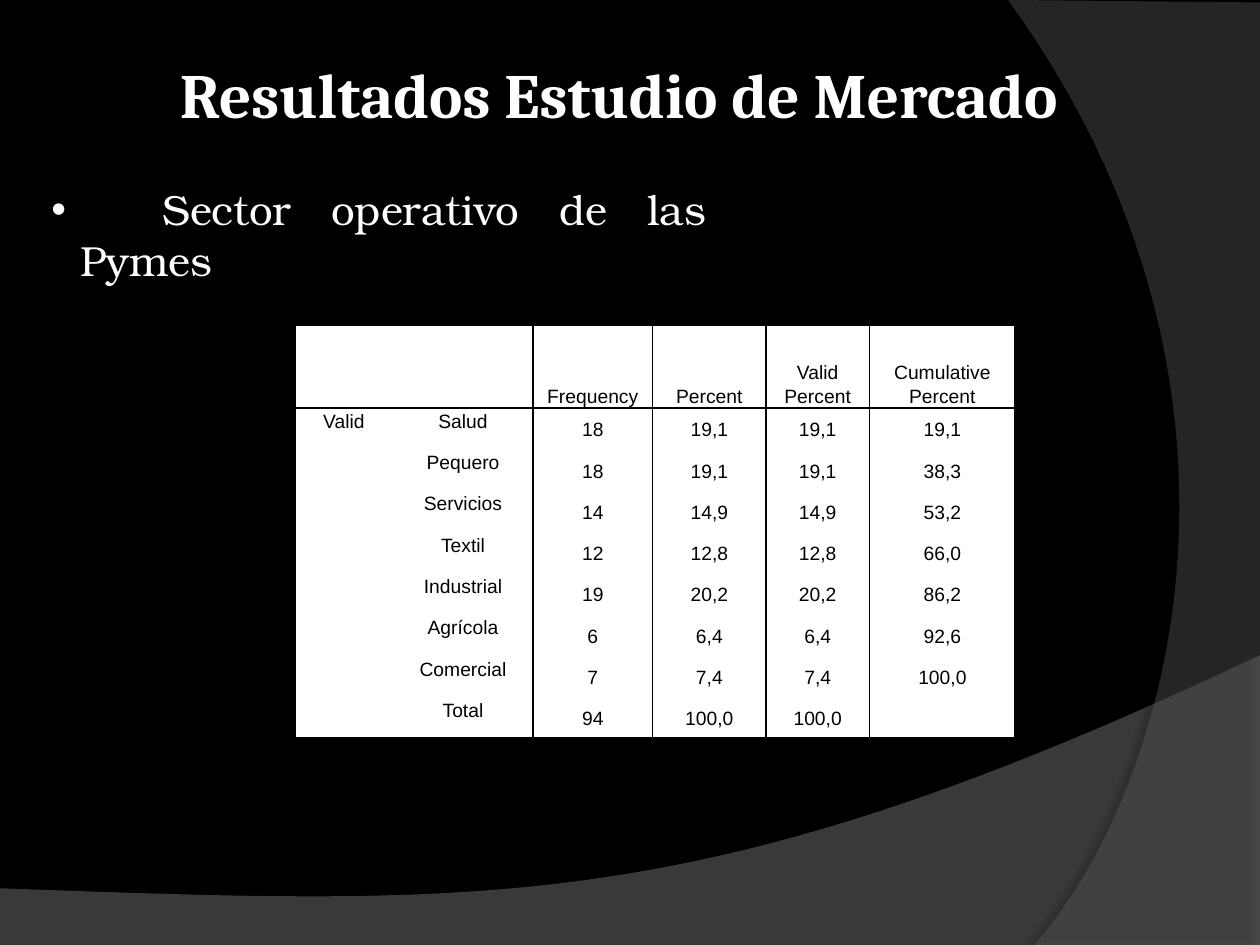
from lxml import etree
from pptx import Presentation
from pptx.dml.color import RGBColor
from pptx.enum.text import MSO_ANCHOR, PP_ALIGN
from pptx.oxml.ns import qn
from pptx.util import Inches, Pt

TOP, MIDDLE, BOTTOM = MSO_ANCHOR.TOP, MSO_ANCHOR.MIDDLE, MSO_ANCHOR.BOTTOM
LEFT, CENTER, JUSTIFY = PP_ALIGN.LEFT, PP_ALIGN.CENTER, PP_ALIGN.JUSTIFY
BLACK, WHITE = "000000", "FFFFFF"

HEAD = ["", "", "Frequency", "Percent", "Valid Percent", "Cumulative Percent"]
ROWS = [
    ["Valid", "Salud", "18", "19,1", "19,1", "19,1"],
    ["", "Pequero", "18", "19,1", "19,1", "38,3"],
    ["", "Servicios", "14", "14,9", "14,9", "53,2"],
    ["", "Textil", "12", "12,8", "12,8", "66,0"],
    ["", "Industrial", "19", "20,2", "20,2", "86,2"],
    ["", "Agrícola", "6", "6,4", "6,4", "92,6"],
    ["", "Comercial", "7", "7,4", "7,4", "100,0"],
    ["", "Total", "94", "100,0", "100,0", ""],
]


def color(code):
    return RGBColor.from_string(code)


def unit(count):
    return Inches(count / 10)


def node(base, tag, **attrs):
    return etree.SubElement(base, qn(tag), {k: str(v) for k, v in attrs.items()})


def curve(start, pull, push, end, steps=48):
    points = []
    for step in range(1, steps + 1):
        t = step / steps
        parts = ((1 - t) ** 3, 3 * t * (1 - t) ** 2, 3 * t * t * (1 - t), t ** 3)
        points.append(tuple(
            sum(w * p[axis] for w, p in zip(parts, (start, pull, push, end)))
            for axis in (0, 1)))
    return points


class Deck:
    def __init__(self):
        self.show = Presentation()
        self.show.slide_width = unit(100)
        self.show.slide_height = unit(75)
        self.slide = self.show.slides.add_slide(self.show.slide_layouts[6])
        fill = self.slide.background.fill
        fill.solid()
        fill.fore_color.rgb = color(BLACK)

    def style(self, para, size, font, ink, bold=False, align=LEFT):
        para.alignment = align
        for run in para.runs:
            run.font.size = Pt(size)
            run.font.name = font
            run.font.bold = bold
            run.font.color.rgb = color(ink)

    def wave(self, points, tint, alpha, shade, angle):
        pen = self.slide.shapes.build_freeform(
            unit(points[0][0]), unit(points[0][1]))
        pen.add_line_segments([(unit(x), unit(y)) for x, y in points[1:]])
        shape = pen.convert_to_shape()
        shape.fill.solid()
        shape.fill.fore_color.rgb = color(tint)
        shape.line.fill.background()
        shape.shadow.inherit = False
        props = shape._element.spPr
        node(props.find(".//" + qn("a:srgbClr")), "a:alpha", val=alpha * 1000)
        glow = node(props.find(qn("a:effectLst")), "a:outerShdw",
                    blurRad=Pt(4), dist=Pt(4), dir=angle * 60000, rotWithShape=0)
        node(node(glow, "a:srgbClr", val=BLACK), "a:alpha", val=shade * 1000)

    def text(self, words, x, y, w, h, **look):
        box = self.slide.shapes.add_textbox(unit(x), unit(y), unit(w), unit(h))
        frame = box.text_frame
        frame.word_wrap = True
        frame.text = words
        self.style(frame.paragraphs[0], **look)
        return frame.paragraphs[0]

    def bullet(self, para, hang, stop):
        props = para._p.get_or_add_pPr()
        props.set("marL", str(unit(hang)))
        props.set("indent", str(-unit(hang)))
        node(props, "a:buFont", typeface="Arial")
        node(props, "a:buChar", char="•")
        node(node(props, "a:tabLst"), "a:tab", pos=unit(stop), algn="l")

    def border(self, cell, sides):
        props = cell._tc.get_or_add_tcPr()
        for spot, side in enumerate("LRTB"):
            width = sides[side]
            line = etree.Element(qn("a:ln" + side), {"w": str(Pt(width))})
            if width:
                node(node(line, "a:solidFill"), "a:srgbClr", val=BLACK)
            else:
                node(line, "a:noFill")
            props.insert(spot, line)

    def table(self, rows, x, y, wide, high):
        frame = self.slide.shapes.add_table(
            len(rows), len(wide), unit(x), unit(y),
            unit(sum(wide)), unit(sum(high)))
        grid = frame.table
        grid.first_row = grid.horz_banding = False
        for col, width in zip(grid.columns, wide):
            col.width = unit(width)
        for row, height in zip(grid.rows, high):
            row.height = unit(height)
        edges = [1.5, 0, 1.5, 1, 1, 1, 1.5]
        rules = [1.5, 1.5] + [0] * (len(rows) - 2) + [1.5]
        for r, words in enumerate(rows):
            for c, word in enumerate(words):
                cell = grid.cell(r, c)
                cell.text = word
                cell.margin_left = cell.margin_right = unit(0.6)
                cell.margin_top = cell.margin_bottom = 0
                cell.vertical_anchor = BOTTOM if r == 0 else TOP if c < 2 else MIDDLE
                para = cell.text_frame.paragraphs[0]
                para.line_spacing = 1.15
                self.style(para, 11, "Arial", BLACK, align=CENTER)
                cell.fill.solid()
                cell.fill.fore_color.rgb = color(WHITE)
                self.border(cell, {"L": edges[c], "R": edges[c + 1],
                                   "T": rules[r], "B": rules[r + 1]})
        grid.cell(0, 0).merge(grid.cell(0, 1))


def main():
    deck = Deck()
    floor = curve((100, 52), (55.9, 72.9), (39.1, 71.9), (0, 70.5))
    deck.wave([(0, 70.5), (0, 75), (100, 75), (100, 52)] + floor,
              "7F7F7F", 45, 35, 270)
    side = curve((82.1, 75), (93.5, 61.9), (101.8, 30), (80, 0))
    deck.wave([(100, 0.2), (100, 75), (82.1, 75)] + side + [(100, 0.2)],
              "5E5E5E", 40, 45, 180)
    deck.text("Resultados Estudio de Mercado", 13.3, 3.9, 76.6, 7.1,
              size=36, font="Cambria", ink=WHITE, bold=True)
    topic = deck.text("\tSector operativo de las Pymes", 3.1, 14.1, 53.9, 21.2,
                      size=24, font="TeX Gyre Bonum", ink=WHITE, align=JUSTIFY)
    deck.bullet(topic, 2.3, 8.8)
    deck.table([HEAD] + ROWS, 23.4, 25.8,
               [7.8, 11.1, 9.5, 9, 8.2, 11.6], [6.56] + [3.28] * len(ROWS))
    deck.show.save("out.pptx")


if __name__ == "__main__":
    main()
